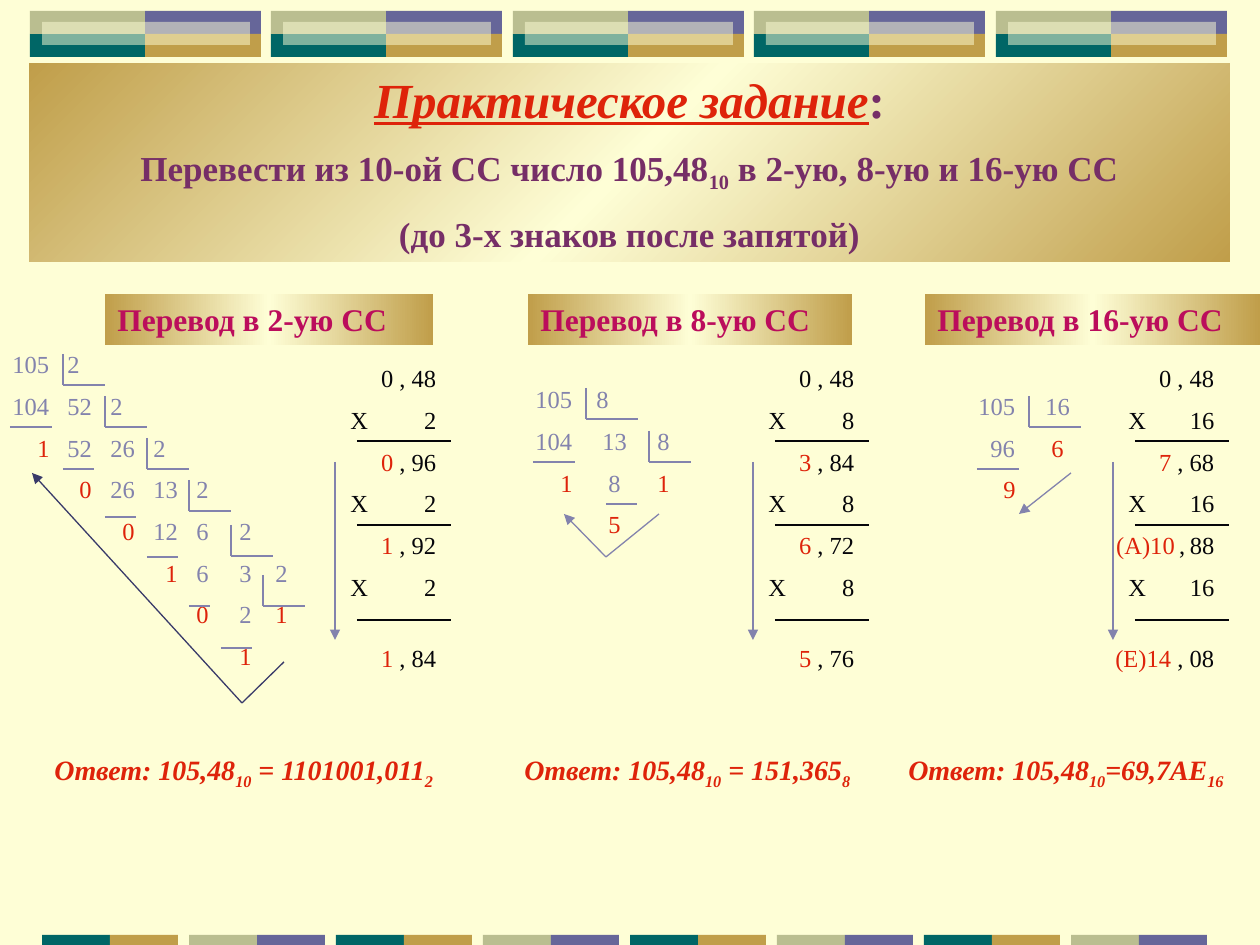
import lxml.etree
import pptx
import pptx.dml.color
import pptx.enum.shapes
import pptx.enum.text
import pptx.oxml.ns
import pptx.util

PX = 914400 // 126
RED, INK, BLACK, PLUM = "DE230A", "8383AD", "06060A", "762E67"
TEAL, GOLD, OLIVE, VIOLET, CREAM = "006666", "C09E4A", "BABE90", "666699", "FEFED6"
qn = pptx.oxml.ns.qn
rgb = pptx.dml.color.RGBColor.from_string


def write(frame, rows, size, bold=False, italic=False, gap=7):
    frame.word_wrap = True
    frame.auto_size = pptx.enum.text.MSO_AUTO_SIZE.NONE
    frame.vertical_anchor = pptx.enum.text.MSO_ANCHOR.TOP
    for number, (stops, runs) in enumerate(rows):
        para = frame.add_paragraph() if number else frame.paragraphs[0]
        if stops:
            tabs = lxml.etree.SubElement(para._p.get_or_add_pPr(), qn("a:tabLst"))
            for position, side in stops:
                lxml.etree.SubElement(tabs, qn("a:tab"), pos=str(position * PX), algn=side)
        para.space_before = pptx.util.Pt(gap if number else 0)
        para.font.name = "Times New Roman"
        para.font.size = pptx.util.Pt(size)
        para.font.bold = bold
        para.font.italic = italic
        for text, color in runs:
            span = para.add_run()
            span.text = text
            span.font.color.rgb = rgb(color)


def draw_line(x1, y1, x2, y2, color=INK, arrow=False):
    line = page.shapes.add_connector(
        pptx.enum.shapes.MSO_CONNECTOR.STRAIGHT, x1 * PX, y1 * PX, x2 * PX, y2 * PX)
    line.line.color.rgb = rgb(color)
    line.line.width = pptx.util.Pt(0.75)
    if arrow:
        lxml.etree.SubElement(line.line._get_or_add_ln(), qn("a:tailEnd"), type="triangle")
    lxml.etree.SubElement(line._element.spPr, qn("a:effectLst"))


deck = pptx.Presentation()
deck.slide_width = 1260 * PX
deck.slide_height = 945 * PX
page = deck.slides.add_slide(deck.slide_layouts[5])
page.background.fill.solid()
page.background.fill.fore_color.rgb = rgb(CREAM)
RECTANGLE = pptx.enum.shapes.MSO_SHAPE.RECTANGLE

tiles = []
for block in range(5):
    x = 30 + block * 483 // 2
    tiles += [(x + 115, 11, 116, 23, VIOLET), (x + 115, 34, 116, 23, GOLD),
              (x, 34, 115, 23, TEAL), (x, 11, 115, 23, OLIVE),
              (x + 12, 22, 208, 23, CREAM)]
for pair in range(8):
    x = 42 + pair * 147
    left_color, right_color = [(TEAL, GOLD), (OLIVE, VIOLET)][pair % 2]
    tiles += [(x, 935, 68, 10, left_color), (x + 68, 935, 68, 10, right_color)]
for x, y, width, height, color in tiles:
    tile = page.shapes.add_shape(RECTANGLE, x * PX, y * PX, width * PX, height * PX)
    tile.shadow.inherit = False
    tile.line.fill.background()
    tile.fill.solid()
    tile.fill.fore_color.rgb = rgb(color)
    if color == CREAM:
        tint = tile._element.spPr.find(".//" + qn("a:srgbClr"))
        lxml.etree.SubElement(tint, qn("a:alpha"), val="50000")

title = page.shapes.title
title.left, title.top, title.width, title.height = 29 * PX, 63 * PX, 1201 * PX, 199 * PX
write(title.text_frame, [
    ([], [("Практическое задание", RED), (":", PLUM)]),
    ([], [("Перевести из 10-ой СС число 105,48", PLUM), ("10", PLUM),
          (" в 2-ую, 8-ую и 16-ую СС", PLUM)]),
    ([], [("(до 3-х знаков после запятой)", PLUM)]),
], 20, bold=True, gap=10.5)
title.text_frame.margin_top = 6 * PX
heading, task = title.text_frame.paragraphs[:2]
heading.font.size = pptx.util.Pt(28)
heading.runs[0].font.italic = True
heading.runs[0].font.underline = True
task.runs[1]._r.get_or_add_rPr().set("baseline", "-25000")
gradients = [(title, 45)]

columns = [
    dict(base="2", heading=(105, 328), fraction=283, answer=(42, 421, " = 1101001,011"),
         products=[("0", "96"), ("1", "92"), ("1", "84")], division=(0, 343),
         steps=[[(0, "105", INK), (55, "2", INK)],
                [(0, "104", INK), (55, "52", INK), (98, "2", INK)],
                [(25, "1", RED), (55, "52", INK), (98, "26", INK), (141, "2", INK)],
                [(67, "0", RED), (98, "26", INK), (141, "13", INK), (184, "2", INK)],
                [(110, "0", RED), (141, "12", INK), (184, "6", INK), (227, "2", INK)],
                [(153, "1", RED), (184, "6", INK), (227, "3", INK), (263, "2", INK)],
                [(184, "0", RED), (227, "2", INK), (263, "1", RED)],
                [(227, "1", RED)]],
         corners=[(63, 354, 42), (105, 396, 42), (147, 438, 42), (189, 480, 42),
                  (231, 525, 42), (263, 575, 42)],
         underlines=[(10, 427, 42), (63, 469, 31), (105, 517, 31), (147, 557, 31),
                     (189, 606, 21), (221, 648, 31)],
         trail=[(284, 662), (242, 703), (32, 473)], trail_color="393A69"),
    dict(base="8", heading=(528, 324), fraction=701, answer=(512, 368, " = 151,365"),
         products=[("3", "84"), ("6", "72"), ("5", "76")], division=(523, 378),
         steps=[[(0, "105", INK), (61, "8", INK)],
                [(0, "104", INK), (67, "13", INK), (122, "8", INK)],
                [(25, "1", RED), (73, "8", INK), (122, "1", RED)],
                [(73, "5", RED)]],
         corners=[(586, 388, 52), (649, 431, 42)],
         underlines=[(533, 462, 42), (606, 504, 31)],
         trail=[(659, 514), (606, 557), (564, 514)], trail_color=INK),
    dict(base="16", heading=(925, 335), fraction=1061, answer=(896, 364, "=69,7АЕ"),
         products=[("7", "68"), ("(А)10", "88"), ("(Е)14", "08")], division=(966, 385),
         steps=[[(0, "105", INK), (67, "16", INK)],
                [(12, "96", INK), (73, "6", RED)],
                [(25, "9", RED)]],
         corners=[(1029, 396, 52)], underlines=[(977, 469, 42)],
         trail=[(1071, 473), (1019, 514)], trail_color=INK),
]

for column in columns:
    base = column["base"]
    x, width = column["heading"]
    banner = page.shapes.add_shape(RECTANGLE, x * PX, 294 * PX, width * PX, 51 * PX)
    banner.shadow.inherit = False
    banner.line.fill.background()
    write(banner.text_frame, [([], [(f"Перевод в {base}-ую СС", "BB0D5C")])], 18, bold=True)
    banner.text_frame.paragraphs[0].alignment = pptx.enum.text.PP_ALIGN.LEFT
    gradients.append((banner, 0))

    left = column["fraction"]
    rows = [([(141, "r")], [("\t0 , 48", BLACK)])]
    for whole, rest in column["products"]:
        rows.append(([(55, "l"), (141, "r")], [(f"\tХ\t{base}", BLACK)]))
        rows.append(([(141, "r")], [("\t" + whole, RED), (" ", BLACK), (",", BLACK),
                                    (" ", BLACK), (rest, BLACK)]))
    box = page.shapes.add_textbox(left * PX, 357 * PX, 179 * PX, 325 * PX)
    write(box.text_frame, rows, 14)
    box.text_frame.paragraphs[-1].space_before = pptx.util.Pt(24)
    if base == "16":
        for span in box.text_frame.paragraphs[4].runs[1:4:2]:
            span.font.size = pptx.util.Pt(10)
    for y in (441, 525, 620):
        draw_line(left + 74, y, left + 168, y, BLACK)
    draw_line(left + 52, 462, left + 52, 640, arrow=True)

    x, y = column["division"]
    rows = [([(stop, "l") for stop, _, _ in step if stop],
             [("\t" * (stop > 0) + text, color) for stop, text, color in step])
            for step in column["steps"]]
    box = page.shapes.add_textbox(x * PX, y * PX, 347 * PX, (13 + 42 * len(rows)) * PX)
    write(box.text_frame, rows, 14)
    box.text_frame.word_wrap = False
    for x, y, width in column["corners"]:
        draw_line(x, y, x, y + 31)
        draw_line(x, y + 31, x + width, y + 31)
    for x, y, width in column["underlines"]:
        draw_line(x, y, x + width, y)
    trail = column["trail"]
    for start, end in zip(trail, trail[1:]):
        draw_line(*start, *end, column["trail_color"], arrow=end == trail[-1])

    x, width, result = column["answer"]
    box = page.shapes.add_textbox(x * PX, 746 * PX, width * PX, 47 * PX)
    runs = [(text, RED) for text in ("Ответ: 105,48", "10", result, base)]
    write(box.text_frame, [([], runs)], 16, bold=True, italic=True)
    for span in box.text_frame.paragraphs[0].runs[1::2]:
        span._r.get_or_add_rPr().set("baseline", "-25000")

for shape, angle in gradients:
    shape.fill.gradient()
    stops = shape._element.spPr.find(".//" + qn("a:gsLst"))
    for stop in list(stops):
        stops.remove(stop)
    for position, color in ((0, GOLD), (50, CREAM), (100, GOLD)):
        stop = lxml.etree.SubElement(stops, qn("a:gs"), pos=str(position * 1000))
        lxml.etree.SubElement(stop, qn("a:srgbClr"), val=color)
    shape._element.spPr.find(".//" + qn("a:lin")).set("ang", str(angle * 60000))

deck.save("out.pptx")
